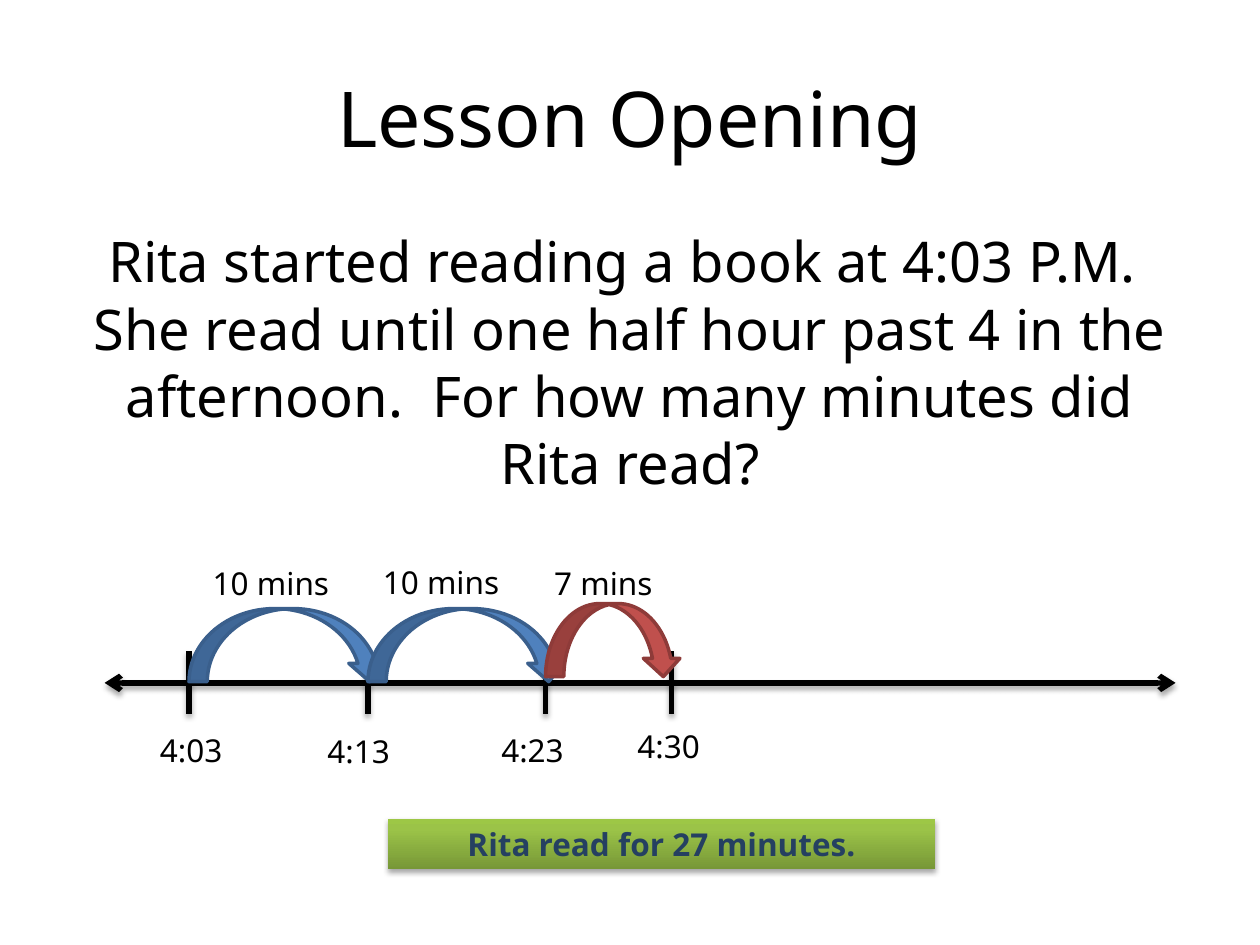
from dataclasses import dataclass

from lxml import etree
from pptx import Presentation
from pptx.dml.color import RGBColor
from pptx.enum import shapes, text
from pptx.oxml.ns import qn
from pptx.util import Inches, Pt

FONT = "Noto Sans"
COLORS = {
    "black": "000000",
    "blue": "4F81BD",
    "blue_edge": "3A5F8C",
    "red": "C0504D",
    "red_edge": "8E3B39",
    "navy": "254061",
}
BANNER_STOPS = ((0, "779737"), (80, "9BC348"), (100, "9DC746"))
LINE_Y = 5.42
TICK_REACH = 0.25
QUESTION = (
    "Rita started reading a book at 4:03 P.M.  She read until one half hour "
    "past 4 in the afternoon.  For how many minutes did Rita read?"
)


@dataclass
class Tick:
    x: float
    label: str
    label_left: float
    label_top: float


@dataclass
class Jump:
    left: float
    top: float
    width: float
    color: str
    label: str
    label_left: float
    label_top: float


TICKS = (
    Tick(1.5, "4:03", 1.17, 5.75),
    Tick(2.92, "4:13", 2.5, 5.76),
    Tick(4.33, "4:23", 3.88, 5.75),
    Tick(5.33, "4:30", 4.96, 5.72),
)
JUMPS = (
    Jump(1.5, 4.83, 1.58, "blue", "10 mins", 1.59, 4.43),
    Jump(2.92, 4.83, 1.58, "blue", "10 mins", 2.94, 4.42),
    Jump(4.33, 4.79, 1.08, "red", "7 mins", 4.3, 4.43),
)


def rgb(name: str) -> RGBColor:
    return RGBColor.from_string(COLORS[name])


def add_node(parent, tag: str, **attributes):
    return etree.SubElement(parent, qn(tag), attributes)


def add_shadow(properties) -> None:
    """Give a shape's properties a soft shadow that falls straight down."""
    effects = properties.find(qn("a:effectLst"))
    if effects is None:
        effects = add_node(properties, "a:effectLst")
    shadow = add_node(effects, "a:outerShdw", blurRad=str(Pt(3.1)), dist=str(Pt(1.8)),
                      dir="5400000", rotWithShape="0")
    color = add_node(shadow, "a:srgbClr", val=COLORS["black"])
    add_node(color, "a:alpha", val="35000")


def write(frame, content: str, *, size: int = 18, color: str = "black",
          bold: bool = False, align=text.PP_ALIGN.LEFT):
    para = frame.paragraphs[0]
    para.alignment = align
    span = para.add_run()
    span.text = content
    span.font.name = FONT
    span.font.size = Pt(size)
    span.font.bold = bold
    span.font.color.rgb = rgb(color)
    return para


def add_label(page, content: str, left: float, top: float, width: float) -> None:
    box = page.shapes.add_textbox(Inches(left), Inches(top), Inches(width), Inches(0.4))
    box.text_frame.word_wrap = True
    write(box.text_frame, content)


def add_line(page, x1: float, y1: float, x2: float, y2: float, arrows: bool = False) -> None:
    line = page.shapes.add_connector(
        shapes.MSO_CONNECTOR.STRAIGHT, Inches(x1), Inches(y1), Inches(x2), Inches(y2))
    line.line.color.rgb = rgb("black")
    line.line.width = Pt(3)
    properties = line._element.spPr
    if arrows:
        for end in ("a:headEnd", "a:tailEnd"):
            add_node(properties.find(qn("a:ln")), end, type="arrow")
    add_shadow(properties)


def add_jump(page, jump: Jump) -> None:
    arc = page.shapes.add_shape(
        shapes.MSO_SHAPE.CURVED_DOWN_ARROW,
        Inches(jump.left), Inches(jump.top), Inches(jump.width), Inches(0.58))
    arc.shadow.inherit = False
    arc.fill.solid()
    arc.fill.fore_color.rgb = rgb(jump.color)
    arc.line.color.rgb = rgb(jump.color + "_edge")
    arc.line.width = Pt(2)
    add_label(page, jump.label, jump.label_left, jump.label_top, 1.46)


def add_banner(page, content: str) -> None:
    banner = page.shapes.add_shape(
        shapes.MSO_SHAPE.RECTANGLE, Inches(3.08), Inches(6.5), Inches(4.34), Inches(0.4))
    banner.shadow.inherit = False
    banner.line.fill.background()
    banner.fill.gradient()
    banner.fill.gradient_angle = 90
    properties = banner._element.spPr
    stops = properties.find(qn("a:gradFill")).find(qn("a:gsLst"))
    for stop in list(stops):
        stops.remove(stop)
    for position, color in BANNER_STOPS:
        stop = add_node(stops, "a:gs", pos=str(position * 1000))
        add_node(stop, "a:srgbClr", val=color)
    add_shadow(properties)
    banner.text_frame.word_wrap = True
    write(banner.text_frame, content, color="navy", bold=True, align=text.PP_ALIGN.CENTER)


def add_problem(page) -> None:
    title, body = page.placeholders
    for box, top, height in ((title, 0.3, 1.25), (body, 1.75, 4.95)):
        box.left, box.top = Inches(0.5), Inches(top)
        box.width, box.height = Inches(9), Inches(height)
    title.text_frame.vertical_anchor = text.MSO_ANCHOR.MIDDLE
    write(title.text_frame, "Lesson Opening", size=44, align=text.PP_ALIGN.CENTER)
    para = write(body.text_frame, QUESTION, size=32, align=text.PP_ALIGN.CENTER)
    layout = para._p.get_or_add_pPr()
    layout.set("marL", "0")
    layout.set("indent", "0")
    add_node(layout, "a:buNone")


def main() -> None:
    deck = Presentation()
    deck.slide_width, deck.slide_height = Inches(10), Inches(7.5)
    page = deck.slides.add_slide(deck.slide_layouts[1])
    add_problem(page)
    add_line(page, 0.83, LINE_Y, 9.33, LINE_Y, arrows=True)
    for tick in TICKS:
        add_line(page, tick.x, LINE_Y - TICK_REACH, tick.x, LINE_Y + TICK_REACH)
        add_label(page, tick.label, tick.label_left, tick.label_top, 0.92)
    for jump in JUMPS:
        add_jump(page, jump)
    add_banner(page, "Rita read for 27 minutes.")
    deck.save("out.pptx")


if __name__ == "__main__":
    main()
